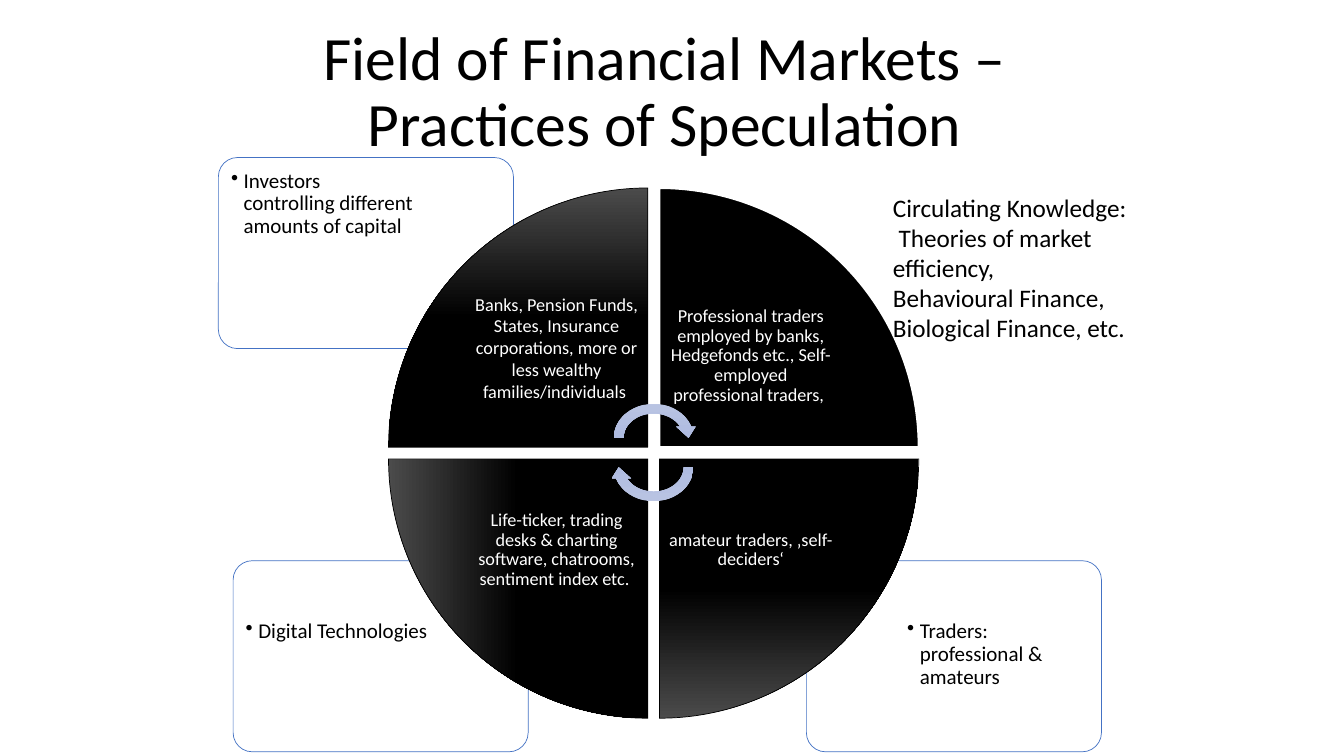
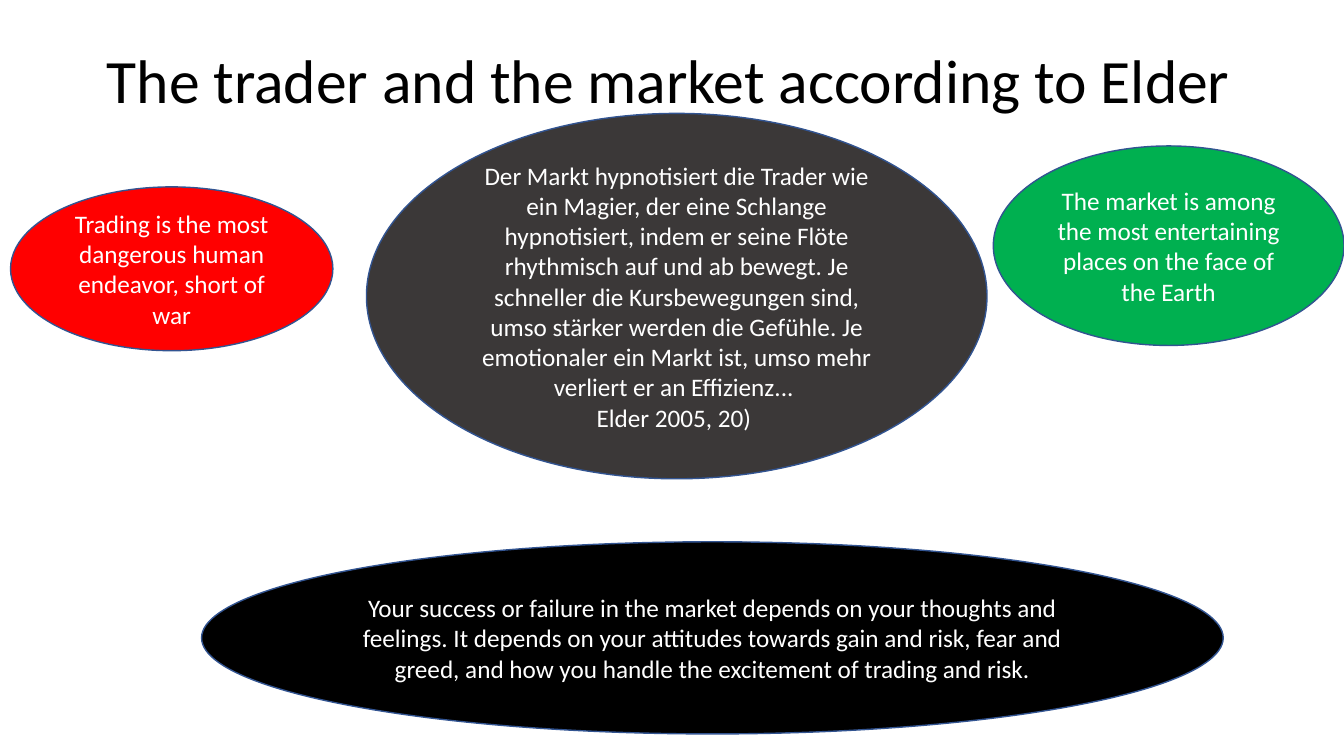
import pptx
import pptx.util
import pptx.dml.color
import pptx.enum.shapes
import pptx.enum.text
import pptx.oxml.ns
from lxml import etree

RGBColor = pptx.dml.color.RGBColor
SHAPE = pptx.enum.shapes.MSO_SHAPE
ALIGN = pptx.enum.text.PP_ALIGN
ANCHOR = pptx.enum.text.MSO_ANCHOR
FIT = pptx.enum.text.MSO_AUTO_SIZE
Pt = pptx.util.Pt
qn = pptx.oxml.ns.qn

BLACK = RGBColor(0x00, 0x00, 0x00)
WHITE = RGBColor(0xFF, 0xFF, 0xFF)
CHARCOAL = RGBColor(0x4B, 0x4B, 0x4B)
DARK_GRAY = RGBColor(0x3B, 0x38, 0x38)
RED = RGBColor(0xFF, 0x00, 0x00)
GREEN = RGBColor(0x00, 0xB0, 0x50)
CARD_BLUE = RGBColor(0x44, 0x72, 0xC4)
OUTLINE_BLUE = RGBColor(0x32, 0x54, 0x91)
ARROW_LIGHT = RGBColor(0xBB, 0xC5, 0xE3)
ARROW_MIDDLE = RGBColor(0xAE, 0xBB, 0xE0)
ARROW_DARK = RGBColor(0x98, 0xA4, 0xCB)

WEDGE_STOPS = [(0, CHARCOAL), (50, BLACK), (100, BLACK)]
ARROW_STOPS = [(0, ARROW_LIGHT), (50, ARROW_MIDDLE), (100, ARROW_DARK)]

EMU_PER_PX = 9525
FONT = "Calibri"
TITLE_ONLY = 5


def px(*lengths):
    return [length * EMU_PER_PX for length in lengths]


class Deck:
    """Holds the shared style and the current slide."""

    def __init__(self):
        self.presentation = pptx.Presentation()
        self.presentation.slide_width, self.presentation.slide_height = px(1280, 720)
        self.slide = None

    def add_slide(self, title, box, align):
        layout = self.presentation.slide_layouts[TITLE_ONLY]
        self.slide = self.presentation.slides.add_slide(layout)
        shape = self.slide.shapes.title
        shape.left, shape.top, shape.width, shape.height = px(*box)
        self.set_text(shape, [title], 44, BLACK, align, ANCHOR.MIDDLE, 0.9)

    def set_text(self, shape, lines, size, color, align=ALIGN.LEFT,
                 anchor=ANCHOR.TOP, spacing=1.0, insets=None):
        frame = shape.text_frame
        frame.word_wrap = True
        frame.auto_size = FIT.NONE
        frame.vertical_anchor = anchor
        if insets:
            (frame.margin_left, frame.margin_top,
             frame.margin_right, frame.margin_bottom) = px(*insets)
        for index, line in enumerate(lines):
            paragraph = frame.paragraphs[0] if index == 0 else frame.add_paragraph()
            paragraph.text = line
            paragraph.alignment = align
            paragraph.line_spacing = spacing
            for run in paragraph.runs:
                run.font.name = FONT
                run.font.size = Pt(size)
                run.font.color.rgb = color

    def text(self, box, lines, size, color, **style):
        shape = self.slide.shapes.add_textbox(*px(*box))
        self.set_text(shape, lines, size, color, **style)
        return shape

    def shape(self, kind, box, fill, line=None, line_width=1, rotation=0):
        """Draw a preset shape; fill is a colour or a list of gradient stops."""
        shape = self.slide.shapes.add_shape(kind, *px(*box))
        shape.shadow.inherit = False
        shape.rotation = rotation
        if isinstance(fill, list):
            self.gradient(shape, fill)
        else:
            shape.fill.solid()
            shape.fill.fore_color.rgb = fill
        if line is None:
            shape.line.fill.background()
        else:
            shape.line.color.rgb = line
            shape.line.width = Pt(line_width)
        return shape

    def gradient(self, shape, stops):
        shape.fill.gradient()
        shape.fill.gradient_angle = 270
        stop_list = next(shape._element.spPr.iter(qn("a:gsLst")))
        for old_stop in list(stop_list):
            stop_list.remove(old_stop)
        for position, color in stops:
            stop = etree.SubElement(stop_list, qn("a:gs"), pos=str(position * 1000))
            etree.SubElement(stop, qn("a:srgbClr"), val=str(color))

    def card(self, left, top, text_offset, text):
        """Draw a rounded card with one bulleted note."""
        card = self.shape(SHAPE.ROUNDED_RECTANGLE, (left, top, 281, 182),
                          WHITE, CARD_BLUE, 0.5)
        card.adjustments[0] = 0.1
        color = next(card._element.spPr.iter(qn("a:srgbClr")))
        etree.SubElement(color, qn("a:alpha"), val="90000")
        across, down = text_offset
        note = self.text((left + across, top + down, 189, 129), [text], 15, BLACK,
                         spacing=0.9, insets=(8, 8, 7, 8))
        properties = note.text_frame.paragraphs[0]._p.get_or_add_pPr()
        indent = px(12)[0]
        properties.set("marL", str(indent))
        properties.set("indent", str(-indent))
        etree.SubElement(properties, qn("a:buChar"), char="•")

    def ellipse(self, box, fill, lines):
        shape = self.shape(SHAPE.OVAL, box, fill, OUTLINE_BLUE)
        self.set_text(shape, lines, 18, WHITE, ALIGN.CENTER, ANCHOR.MIDDLE)


def build_field_slide(deck):
    deck.add_slide("Field of Financial Markets – \vPractices of Speculation ",
                   (88, 0, 1104, 178), ALIGN.CENTER)

    # Corner cards
    deck.card(222, 534, (4, 49), "Digital Technologies")
    deck.card(768, 534, (88, 49), "Traders:\vprofessional & amateurs")
    deck.card(208, 150, (4, 4), "Investors\vcontrolling different amounts of capital")

    # Circle of four wedges, clockwise from the top left
    left, top, pitch, size, label = 370, 179, 258, 247, 174
    wedges = [
        (0, 0, "Banks, Pension Funds, States, Insurance corporations, "
               "more or less wealthy families/individuals ", 1.0, 26),
        (1, 0, "Professional traders employed by banks, Hedgefonds etc., "
               "Self-employed professional traders, ", 0.9, 10),
        (1, 1, "amateur traders, ‚self-deciders‘", 0.9, 10),
        (0, 1, "Life-ticker, trading desks & charting software, chatrooms, "
               "sentiment index etc. ", 0.9, 10),
    ]
    for index, (column, row, text, spacing, bottom) in enumerate(wedges):
        x, y = left + column * pitch, top + row * pitch
        plain = index == 1
        deck.shape(SHAPE.PIE_WEDGE, (x, y, size, size),
                   BLACK if plain else WEDGE_STOPS,
                   WHITE if plain else BLACK, 1.5 if plain else 0.5, index * 90)
        inner_x = x + (1 - column) * (size - label)
        inner_y = y + (1 - row) * (size - label)
        deck.text((inner_x, inner_y, label, label), [text], 13, WHITE,
                  align=ALIGN.CENTER, anchor=ANCHOR.MIDDLE, spacing=spacing,
                  insets=(9, 10, 9, bottom))

    # Rotating arrows in the centre
    for y, rotation in ((380, 0), (408, 180)):
        deck.shape(SHAPE.CIRCULAR_ARROW, (580, y, 85, 74), ARROW_STOPS,
                   rotation=rotation)

    # Side note
    note = deck.text((841, 178, 351, 156),
                     ["Circulating Knowledge:", " Theories of market", "efficiency,",
                      "Behavioural Finance,", "Biological Finance, etc."], 18, BLACK)
    note.text_frame.auto_size = FIT.SHAPE_TO_FIT_TEXT


def build_elder_slide(deck):
    deck.add_slide("The trader and the market according to Elder",
                   (92, 10, 1104, 139), ALIGN.LEFT)

    # Quotations
    deck.ellipse((10, 178, 307, 156), RED,
                 ["Trading is the most dangerous human endeavor, short of war"])
    deck.ellipse((946, 139, 334, 190), GREEN,
                 ["The market is among the most entertaining places on the face "
                  "of the Earth"])
    deck.ellipse((349, 108, 591, 348), DARK_GRAY,
                 ["Der Markt hypnotisiert die Trader wie ein Magier, der eine Schlange "
                  "hypnotisiert, indem er seine Flöte rhythmisch auf und ab bewegt. "
                  "Je schneller die Kursbewegungen sind, umso stärker werden die "
                  "Gefühle. Je emotionaler ein Markt ist, umso mehr verliert er an "
                  "Effizienz... ",
                  "Elder 2005, 20) "])
    deck.ellipse((192, 516, 973, 183), BLACK,
                 ["Your success or failure in the market depends on your thoughts and "
                  "feelings. It depends on your attitudes towards gain and risk, fear "
                  "and greed, and how you handle the excitement of trading and risk."])


def main():
    deck = Deck()
    build_field_slide(deck)
    build_elder_slide(deck)
    deck.presentation.save("out.pptx")


if __name__ == "__main__":
    main()
